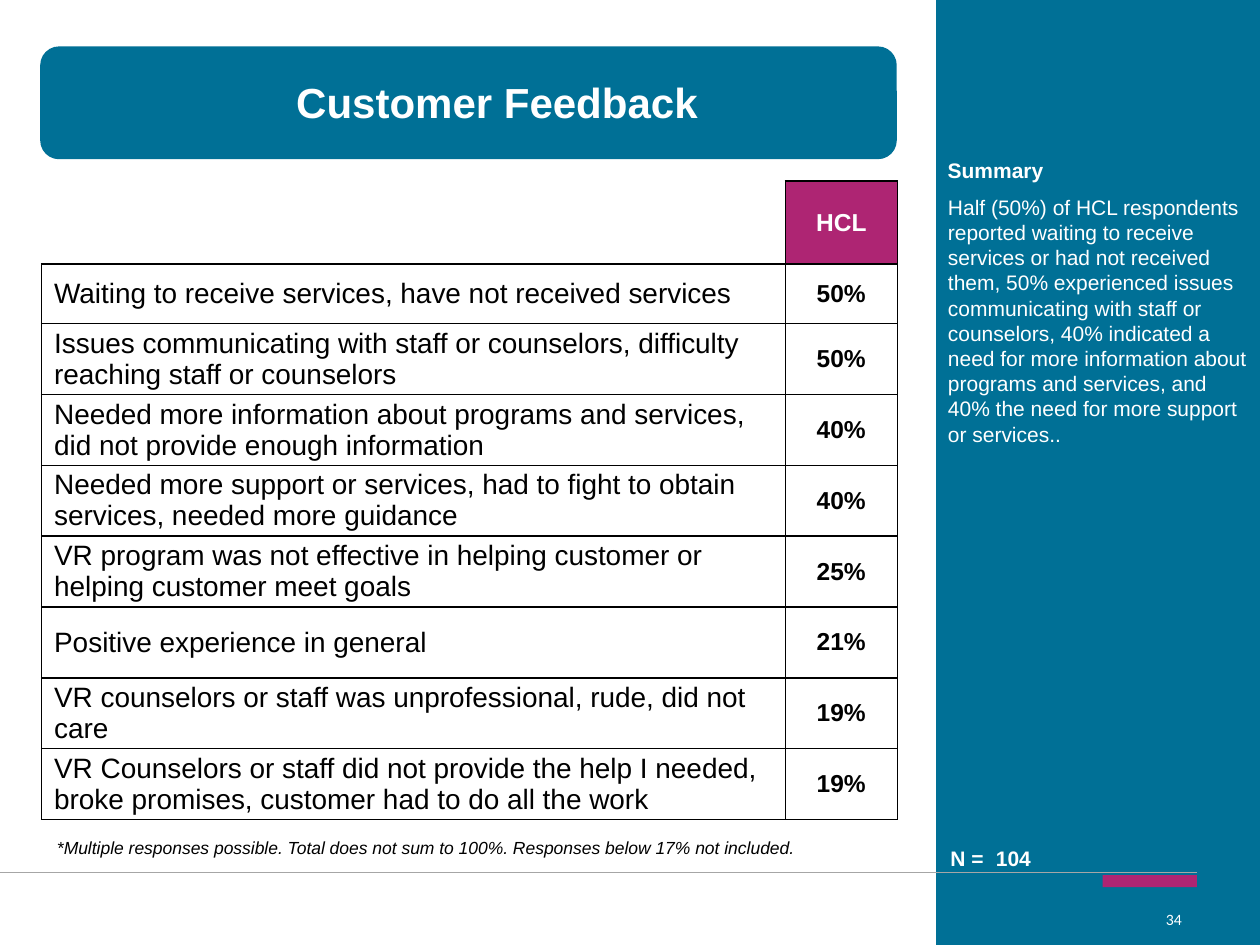
"""Build the Customer Feedback slide with its table and summary panel."""
from lxml import etree
from pptx import Presentation
from pptx.dml.color import RGBColor
from pptx.enum.shapes import MSO_CONNECTOR, MSO_SHAPE
from pptx.enum.text import MSO_ANCHOR, MSO_AUTO_SIZE, PP_ALIGN
from pptx.oxml.ns import qn
from pptx.util import Pt

LEFT, MID, RIGHT = PP_ALIGN.LEFT, PP_ALIGN.CENTER, PP_ALIGN.RIGHT
TOP, CENTER = MSO_ANCHOR.TOP, MSO_ANCHOR.MIDDLE
RECT, ROUND = MSO_SHAPE.RECTANGLE, MSO_SHAPE.ROUNDED_RECTANGLE
TEAL, PLUM, WHITE, BLACK = "007096", "AE2573", "FFFFFF", "000000"
rgb = RGBColor.from_string


def style(par, size, color, bold=False, align=LEFT, face="Arial"):
    """Set the font and alignment of a paragraph."""
    par.alignment = align
    font = par.font
    font.name, font.size, font.bold = face, Pt(size), bold
    font.color.rgb = rgb(color)


def write(box, place, text, size, color, **look):
    """Place a text shape and fill its first paragraph."""
    box.left, box.top, box.width, box.height = map(Pt, place)
    frame = box.text_frame
    frame.word_wrap, frame.auto_size = True, MSO_AUTO_SIZE.NONE
    frame.vertical_anchor = TOP
    frame.text = text
    par = frame.paragraphs[0]
    style(par, size, color, **look)
    return par


deck = Presentation()
deck.slide_width, deck.slide_height = Pt(720), Pt(540)
slide = deck.slides.add_slide(deck.slide_layouts[1])
shapes = slide.shapes
title, body = slide.placeholders

for kind, place, color in [
    (ROUND, (23, 26.5, 489.5, 64.5), TEAL),
    (RECT, (535, 0, 185, 540), TEAL),
    (RECT, (630, 500, 54, 7), PLUM),
]:
    shape = shapes.add_shape(kind, *map(Pt, place))
    shape.shadow.inherit = False
    shape.fill.solid()
    shape.fill.fore_color.rgb = rgb(color)
    shape.line.fill.background()

rule = shapes.add_connector(MSO_CONNECTOR.STRAIGHT, 0, Pt(498.5), Pt(684), Pt(498.5))
rule.line.color.rgb, rule.line.width = rgb("A6A6A6"), Pt(0.75)
etree.SubElement(rule.element.spPr, qn("a:effectLst"))

write(title, (63.5, 40, 441, 35), "Customer Feedback", 24, WHITE, bold=True, align=MID)
par = write(
    body, (534.5, 107.5, 186, 179),
    "Half (50%) of HCL respondents reported waiting to receive services or had not "
    "received them, 50% experienced issues communicating with staff or counselors, "
    "40% indicated a need for more information about programs and services, and "
    "40% the need for more support or services..", 12, WHITE)
props = par._p.get_or_add_pPr()
props.set("marL", "0")
props.set("indent", "0")
etree.SubElement(props, qn("a:buNone"))
props.append(props.find(qn("a:defRPr")))
for holder in (title, body):
    shapes.element.append(holder.element)

for place, text in [
    ((534.5, 86.5, 185, 22), "Summary"),
    ((536, 479.5, 47, 22), "N ="),
    ((562, 479.5, 40, 22), "104"),
]:
    write(shapes.add_textbox(0, 0, 0, 0), place, text, 12, WHITE, bold=True)

note = write(
    shapes.add_textbox(0, 0, 0, 0), (25.5, 474.5, 487, 24),
    "*Multiple responses possible. Total does not sum to 100%. "
    "Responses below 17% not included.", 10, BLACK)
note.font.italic = True
note.space_before = Pt(2)

page = shapes.add_textbox(0, 0, 0, 0)
write(page, (411, 514, 271.5, 22), "34", 9, WHITE, align=RIGHT, face="Calibri")
page.text_frame.vertical_anchor = CENTER

rows = [
    ("", "HCL"),
    ("Waiting to receive services, have not received services", "50%"),
    ("Issues communicating with staff or counselors, difficulty reaching staff or counselors", "50%"),
    ("Needed more information about programs and services, did not provide enough information", "40%"),
    ("Needed more support or services, had to fight to obtain services, needed more guidance", "40%"),
    ("VR program was not effective in helping customer or helping customer meet goals", "25%"),
    ("Positive experience in general", "21%"),
    ("VR counselors or staff was unprofessional, rude, did not care", "19%"),
    ("VR Counselors or staff did not provide the help I needed, "
     "broke promises, customer had to do all the work", "19%"),
]
table = shapes.add_table(len(rows), 2, Pt(23.75), Pt(103.5), Pt(489), Pt(365)).table
table.first_row = table.horz_banding = False
for col, width in zip(table.columns, (425, 64)):
    col.width = Pt(width)
for r, row in enumerate(rows):
    table.rows[r].height = Pt({0: 47.5, 1: 34}.get(r, 40.5))
    for c, text in enumerate(row):
        cell = table.cell(r, c)
        cell.text = text
        cell.vertical_anchor = CENTER
        cell.margin_top = cell.margin_right = cell.margin_bottom = 0
        cell.margin_left = 0 if c else Pt(7.2)
        style(cell.text_frame.paragraphs[0], 14 if c else 16,
              BLACK if r else WHITE, bold=c == 1, align=MID if c else LEFT)
        tc = cell._tc.get_or_add_tcPr()
        for side in ("lnL", "lnR", "lnT", "lnB") if r or c else ("lnR", "lnB"):
            edge = etree.SubElement(tc, qn("a:" + side), w=str(Pt(1)))
            paint = etree.SubElement(edge, qn("a:solidFill"))
            etree.SubElement(paint, qn("a:srgbClr"), val=BLACK)
        if c and not r:
            cell.fill.solid()
            cell.fill.fore_color.rgb = rgb(PLUM)
        else:
            cell.fill.background()

deck.save("out.pptx")
